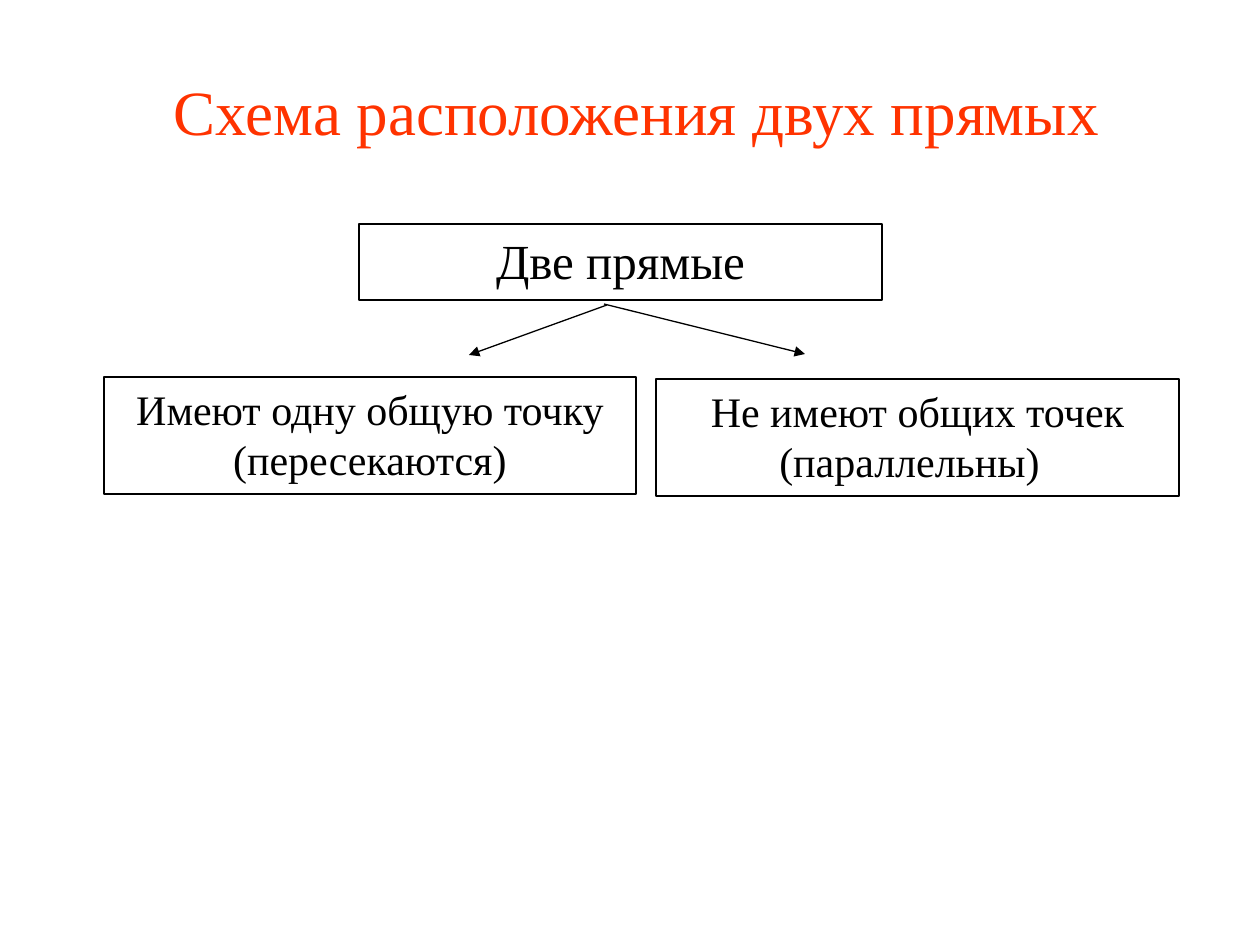
from lxml.etree import SubElement
from pptx import Presentation
from pptx.dml.color import RGBColor
from pptx.enum.shapes import MSO_CONNECTOR, MSO_SHAPE
from pptx.enum.text import MSO_ANCHOR, PP_ALIGN
from pptx.oxml.ns import qn
from pptx.util import Emu, Pt

COLORS = {"title": "FF3300", "ink": "000000", "box": "FFFFFF"}
FONT = "Times New Roman"


def px(n):
    """Convert px (126 to the inch) to EMU."""
    return Emu(round(n * 914400 / 126))


def add_text(p, text, size, color):
    p.alignment = PP_ALIGN.CENTER
    r = p.add_run()
    r.text = text
    r.font.name = FONT
    r.font.size = Pt(size)
    r.font.color.rgb = RGBColor.from_string(COLORS[color])


prs = Presentation()
prs.slide_width, prs.slide_height = px(1260), px(945)
s = prs.slides.add_slide(prs.slide_layouts[5])

title = s.shapes.title
title.left, title.top, title.width, title.height = map(px, (101, 79, 1071, 63))
title.text_frame.vertical_anchor = MSO_ANCHOR.MIDDLE
add_text(title.text_frame.paragraphs[0], "Схема расположения двух прямых", 36, "title")

# left, top, width, height, font size, lines with their right indent
boxes = [
    (656, 379, 523, 117, 24, [("Не имеют общих точек", 0), ("(параллельны)", 16)]),
    (104, 377, 532, 117, 24, [("Имеют одну общую точку", 0), ("(пересекаются)", 0)]),
    (359, 224, 523, 76, 28, [("Две прямые", 0)]),
]
for left, top, width, height, size, lines in boxes:
    sp = s.shapes.add_shape(MSO_SHAPE.RECTANGLE, px(left), px(top), px(width), px(height))
    sp.shadow.inherit = False
    sp.fill.solid()
    sp.fill.fore_color.rgb = RGBColor.from_string(COLORS["box"])
    sp.line.color.rgb = RGBColor.from_string(COLORS["ink"])
    sp.line.width = Pt(0.75)
    tf = sp.text_frame
    tf.word_wrap = True
    tf.vertical_anchor = MSO_ANCHOR.TOP
    for i, (text, indent) in enumerate(lines):
        p = tf.add_paragraph() if i else tf.paragraphs[0]
        add_text(p, text, size, "ink")
        if indent:
            p._p.get_or_add_pPr().set("marR", str(px(indent)))

arrows = [(607, 305, 469, 355), (604, 304, 805, 354)]
for ends in arrows:
    arrow = s.shapes.add_connector(MSO_CONNECTOR.STRAIGHT, *map(px, ends))
    arrow.line.color.rgb = RGBColor.from_string(COLORS["ink"])
    arrow.line.width = Pt(0.75)
    SubElement(arrow.line._get_or_add_ln(), qn("a:tailEnd"), type="triangle")
    SubElement(arrow._element.spPr, qn("a:effectLst"))

prs.save("out.pptx")
